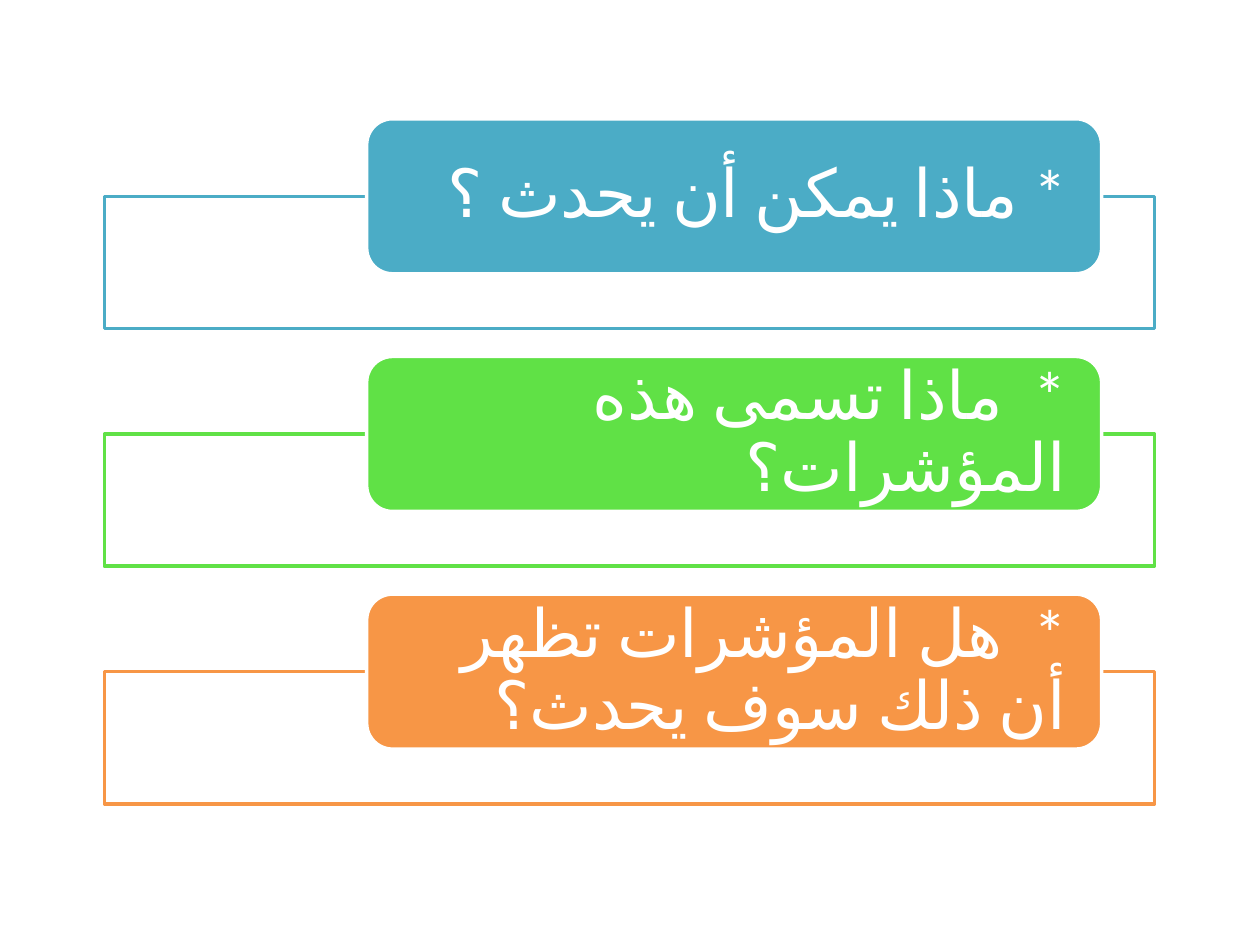
from lxml.etree import SubElement
from pptx import Presentation
from pptx.dml.color import RGBColor
from pptx.enum.lang import MSO_LANGUAGE_ID
from pptx.enum.shapes import MSO_SHAPE
from pptx.enum.text import MSO_ANCHOR, PP_ALIGN
from pptx.oxml.ns import qn
from pptx.util import Pt

COLORS = {"white": "FFFFFF", "blue": "4BACC6", "green": "60E146", "orange": "F79646"}
FONT = "Calibri"
QUESTIONS = [
    ("blue", "* ماذا يمكن أن يحدث ؟"),
    ("green", "*  ماذا تسمى هذه المؤشرات؟"),
    ("orange", "*  هل المؤشرات تظهر أن ذلك سوف يحدث؟"),
]

FRAME_LEFT, FRAME_WIDTH, FRAME_HEIGHT = 59.7, 600, 75.6
FIRST_FRAME_TOP, ROW_STEP = 112.2, 135.8
LABEL_LEFT, LABEL_WIDTH, LABEL_HEIGHT = 209.5, 420, 88.6


def rgb(name):
    return RGBColor.from_string(COLORS[name])


def add_box(slide, kind, left, top, width, height, fill, line):
    shape = slide.shapes.add_shape(kind, Pt(left), Pt(top), Pt(width), Pt(height))
    shape.shadow.inherit = False
    shape.fill.solid()
    shape.fill.fore_color.rgb = rgb(fill)
    shape.line.color.rgb = rgb(line)
    shape.line.width = Pt(2)
    return shape


def write_question(shape, text):
    text_frame = shape.text_frame
    text_frame.word_wrap = True
    text_frame.vertical_anchor = MSO_ANCHOR.MIDDLE
    text_frame.margin_left = text_frame.margin_right = Pt(15.8)
    text_frame.margin_top = text_frame.margin_bottom = 0
    text_frame.text = text
    paragraph = text_frame.paragraphs[0]
    paragraph.alignment = PP_ALIGN.RIGHT
    paragraph.line_spacing = 0.9
    # Right-to-left reading order
    paragraph._p.get_or_add_pPr().set("rtl", "1")
    run = paragraph.runs[0]
    run.font.name = FONT
    run.font.size = Pt(38)
    run.font.color.rgb = rgb("white")
    run.font.language_id = MSO_LANGUAGE_ID.ARABIC
    # Arabic letters take the complex-script typeface
    SubElement(run._r.get_or_add_rPr(), qn("a:cs")).set("typeface", FONT)


def add_question(slide, frame_top, color, text):
    # Outlined frame behind, with the label centred on its top edge
    add_box(slide, MSO_SHAPE.RECTANGLE, FRAME_LEFT, frame_top,
            FRAME_WIDTH, FRAME_HEIGHT, "white", color)
    label = add_box(slide, MSO_SHAPE.ROUNDED_RECTANGLE, LABEL_LEFT,
                    frame_top - LABEL_HEIGHT / 2, LABEL_WIDTH, LABEL_HEIGHT,
                    color, "white")
    write_question(label, text)


def main():
    presentation = Presentation()
    presentation.slide_width, presentation.slide_height = Pt(720), Pt(540)
    # Blank layout: the slide has no title
    slide = presentation.slides.add_slide(presentation.slide_layouts[6])
    for row, (color, text) in enumerate(QUESTIONS):
        add_question(slide, FIRST_FRAME_TOP + row * ROW_STEP, color, text)
    presentation.save("out.pptx")


if __name__ == "__main__":
    main()
